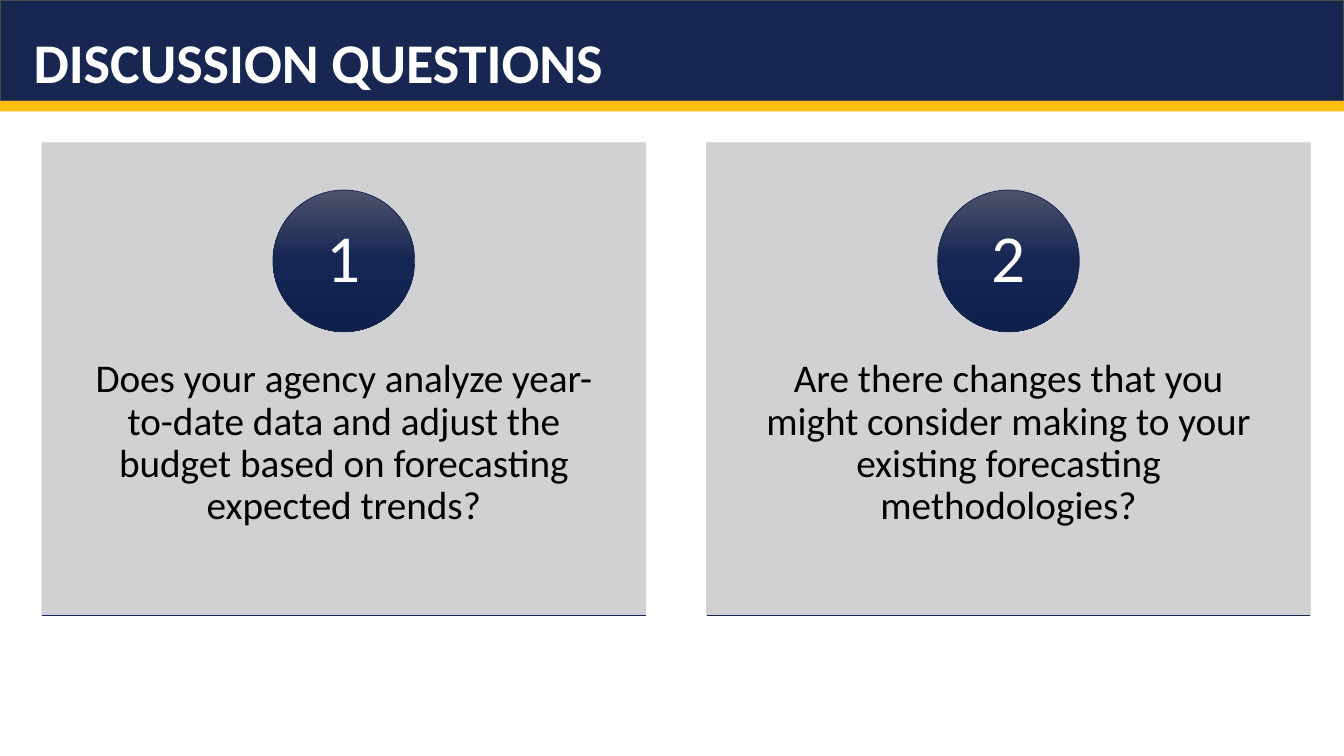
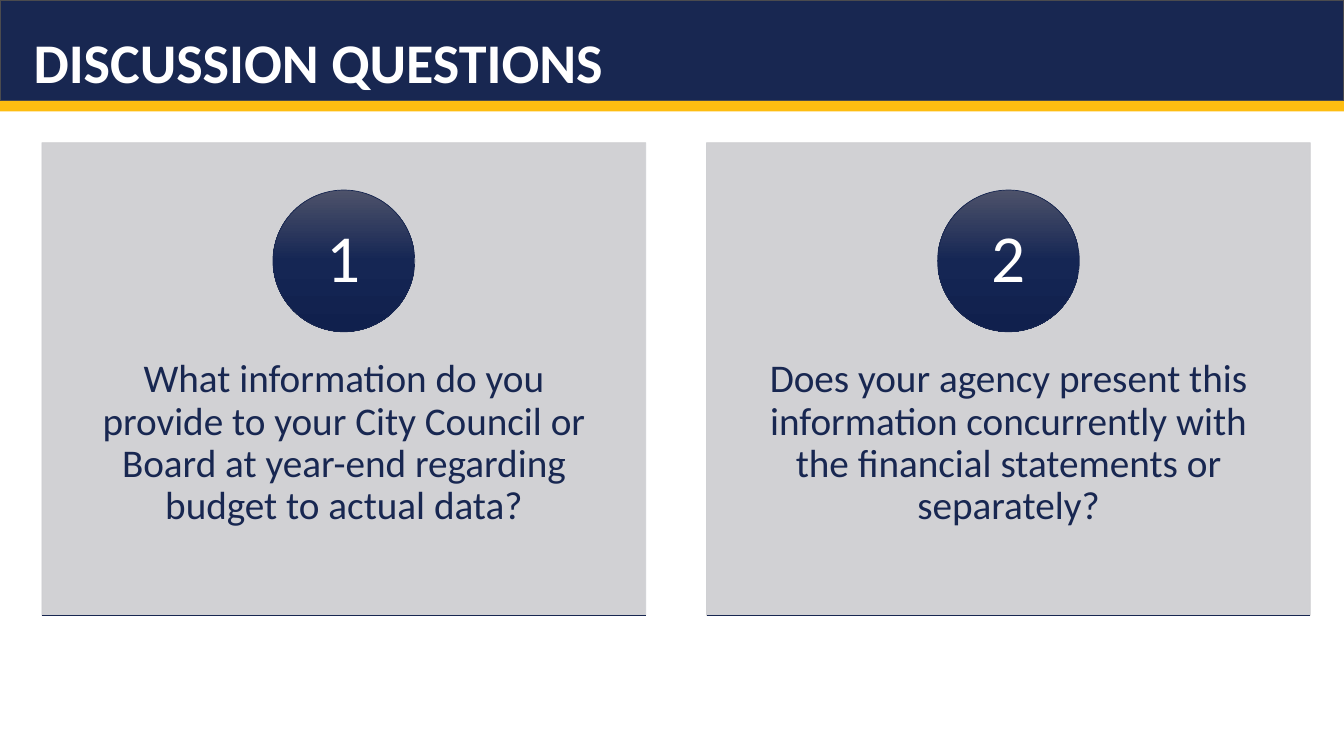
import copy

import lxml.etree
import pptx
import pptx.dml.color
import pptx.enum.shapes
import pptx.enum.text
import pptx.oxml.ns
import pptx.util

RGBColor = pptx.dml.color.RGBColor
SHAPE = pptx.enum.shapes.MSO_SHAPE
ANCHOR = pptx.enum.text.MSO_ANCHOR
ALIGN = pptx.enum.text.PP_ALIGN
qn = pptx.oxml.ns.qn

NAVY = RGBColor(0x18, 0x27, 0x51)
GOLD = RGBColor(0xFE, 0xBD, 0x11)
CHARCOAL = RGBColor(0x4B, 0x4B, 0x4E)
GREY = RGBColor(0xCC, 0xCD, 0xD0)
BLACK = RGBColor(0x00, 0x00, 0x00)
WHITE = RGBColor(0xFF, 0xFF, 0xFF)
BADGE_STOPS = [
    (0, RGBColor(0x4D, 0x52, 0x6A)),
    (0.5, RGBColor(0x15, 0x26, 0x54)),
    (1, RGBColor(0x10, 0x20, 0x4D)),
]

FONT = "Calibri"
EMU_PER_PX = 9525
SLIDE_W, SLIDE_H = 1280, 720
BAND_H, STRIPE_H = 96, 10
TITLE_X, TITLE_W = 32, 1216
CARD_X, CARD_Y, CARD_W, CARD_H = 40, 136, 575, 450
CARD_PITCH = 633
BADGE_Y, BADGE_D = 181, 135
QUESTION_Y, QUESTION_H = 307, 270

TITLE = "DISCUSSION QUESTIONS"
SLIDES = [
    (BLACK, [
        "Does your agency analyze year-to-date data and adjust the budget "
        "based on forecasting expected trends?",
        "Are there changes that you might consider making to your existing "
        "forecasting methodologies?",
    ]),
    (NAVY, [
        "What information do you provide to your City Council or Board at "
        "year-end regarding budget to actual data?",
        "Does your agency present this information concurrently with the "
        "financial statements or separately?",
    ]),
]


def px(n):
    return pptx.util.Emu(round(n * EMU_PER_PX))


def add_box(s, kind, x, y, w, h, fill=None, line=None, line_pt=0.5):
    sp = s.shapes.add_shape(kind, px(x), px(y), px(w), px(h))
    sp.shadow.inherit = False
    if fill is not None:
        sp.fill.solid()
        sp.fill.fore_color.rgb = fill
    if line is None:
        sp.line.fill.background()
    else:
        sp.line.color.rgb = line
        sp.line.width = pptx.util.Pt(line_pt)
    return sp


def set_opacity(sp, percent):
    """Apply the opacity to both the fill and the line."""
    for color in sp._element.spPr.findall(".//" + qn("a:srgbClr")):
        lxml.etree.SubElement(color, qn("a:alpha"), val=str(percent * 1000))


def set_gradient(sp, stops):
    """Fill from top to bottom with any number of (position, colour) stops."""
    sp.fill.gradient()
    sp.fill.gradient_angle = 270
    stop_list = sp._element.spPr.find(".//" + qn("a:gsLst"))
    while len(stop_list) < len(stops):
        stop_list.append(copy.deepcopy(stop_list[0]))
    for stop, (position, color) in zip(sp.fill.gradient_stops, stops):
        stop.position = position
        stop.color.rgb = color


def write(sp, text, size, color, align, anchor, margins=(0, 0), bold=False):
    """Set one run of text; margins are horizontal and vertical px."""
    tf = sp.text_frame
    tf.word_wrap = True
    tf.vertical_anchor = anchor
    tf.margin_left = tf.margin_right = px(margins[0])
    tf.margin_top = tf.margin_bottom = px(margins[1])
    p = tf.paragraphs[0]
    p.alignment = align
    p.line_spacing = 0.9
    r = p.add_run()
    r.text = text
    r.font.name = FONT
    r.font.size = pptx.util.Pt(size)
    r.font.bold = bold
    r.font.color.rgb = color


def add_text(s, x, y, w, h, *args, **kwargs):
    write(s.shapes.add_textbox(px(x), px(y), px(w), px(h)), *args, **kwargs)


def add_rule(s, x, y, w):
    rule = s.shapes.add_connector(
        pptx.enum.shapes.MSO_CONNECTOR.STRAIGHT, px(x), px(y), px(x + w), px(y))
    rule.line.color.rgb = NAVY
    rule.line.width = pptx.util.Pt(0.5)
    lxml.etree.SubElement(rule._element.spPr, qn("a:effectLst"))


def add_header(s):
    add_box(s, SHAPE.RECTANGLE, 0, BAND_H, SLIDE_W, STRIPE_H, GOLD)
    add_box(s, SHAPE.RECTANGLE, 0, 0, SLIDE_W, BAND_H, NAVY, CHARCOAL, 1)
    add_text(s, TITLE_X, 0, TITLE_W, BAND_H, TITLE, 40, WHITE,
             ALIGN.LEFT, ANCHOR.BOTTOM, margins=(0, 5), bold=True)


def add_card(s, index, question, color):
    x = CARD_X + index * CARD_PITCH
    card = add_box(s, SHAPE.RECTANGLE, x, CARD_Y, CARD_W, CARD_H, GREY, GREY)
    set_opacity(card, 90)
    add_text(s, x, QUESTION_Y, CARD_W, QUESTION_H, question, 28, color,
             ALIGN.CENTER, ANCHOR.TOP, margins=(45, 35))
    badge = add_box(s, SHAPE.OVAL, x + (CARD_W - BADGE_D) / 2, BADGE_Y,
                    BADGE_D, BADGE_D, line=NAVY)
    set_gradient(badge, BADGE_STOPS)
    write(badge, str(index + 1), 48, WHITE, ALIGN.CENTER, ANCHOR.MIDDLE)
    add_rule(s, x, CARD_Y + CARD_H, CARD_W)


def main():
    prs = pptx.Presentation()
    prs.slide_width, prs.slide_height = px(SLIDE_W), px(SLIDE_H)
    for color, questions in SLIDES:
        s = prs.slides.add_slide(prs.slide_layouts[6])
        add_header(s)
        for index, question in enumerate(questions):
            add_card(s, index, question, color)
    prs.save("out.pptx")


if __name__ == "__main__":
    main()
